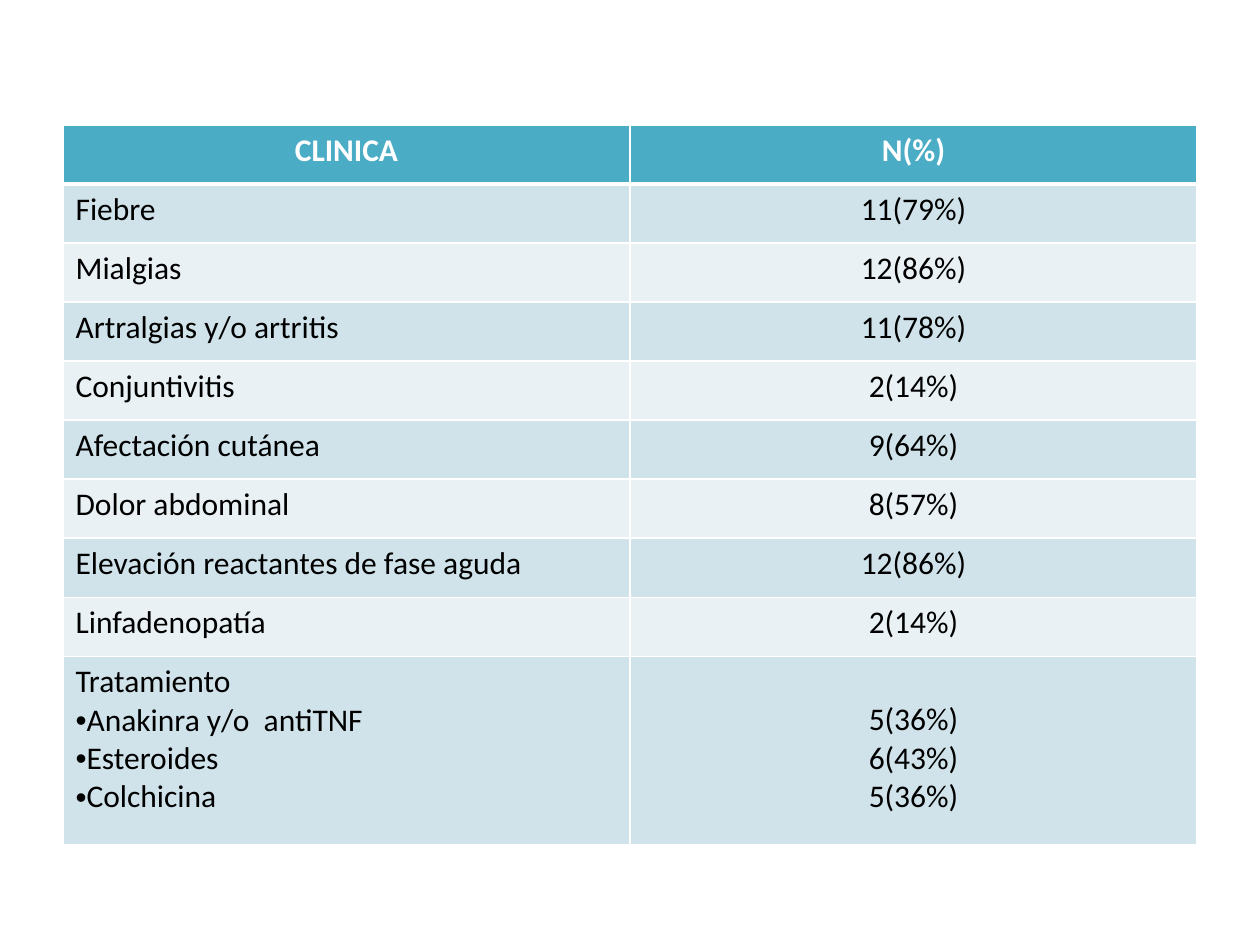
"""Build a slide with a table of clinical findings and treatments."""
import lxml.etree
import pptx
import pptx.dml.color
import pptx.enum.text
import pptx.oxml.ns
import pptx.util

Cm = pptx.util.Cm
Pt = pptx.util.Pt
RGBColor = pptx.dml.color.RGBColor
Align = pptx.enum.text.PP_ALIGN
qn = pptx.oxml.ns.qn

WHITE = RGBColor(0xFF, 0xFF, 0xFF)
BLACK = RGBColor(0x00, 0x00, 0x00)
TEAL = RGBColor(0x4B, 0xAC, 0xC6)
BANDS = (RGBColor(0xD0, 0xE3, 0xEA), RGBColor(0xE9, 0xF1, 0xF5))

HEADER = ("CLINICA", "N(%)")
FINDINGS = (
    ("Fiebre", "11(79%)"),
    ("Mialgias", "12(86%)"),
    ("Artralgias y/o artritis", "11(78%)"),
    ("Conjuntivitis", "2(14%)"),
    ("Afectación cutánea", "9(64%)"),
    ("Dolor abdominal", "8(57%)"),
    ("Elevación reactantes de fase aguda", "12(86%)"),
    ("Linfadenopatía", "2(14%)"),
)
TREATMENTS = (
    ("Anakinra y/o  antiTNF", "5(36%)"),
    ("Esteroides", "6(43%)"),
    ("Colchicina", "5(36%)"),
)


class ClinicalSlide:
    """Hold the text style and the current slide."""

    def __init__(self, deck):
        self.slide = deck.slides.add_slide(deck.slide_layouts[6])
        self.style = {"name": "Calibri", "size": Pt(18)}

    def table(self, left, top, column_width, heights):
        frame = self.slide.shapes.add_table(
            len(heights), 2, left, top, column_width * 2, sum(heights))
        for row, height in zip(frame.table.rows, heights):
            row.height = height
        return frame.table

    def border(self, cell, side, width):
        properties = cell._tc.get_or_add_tcPr()
        line = lxml.etree.SubElement(properties, qn(f"a:ln{side}"), w=str(Pt(width)))
        fill = lxml.etree.SubElement(line, qn("a:solidFill"))
        lxml.etree.SubElement(fill, qn("a:srgbClr"), val=str(WHITE))

    def bullet(self, para):
        properties = para._p.get_or_add_pPr()
        lxml.etree.SubElement(properties, qn("a:buFont"), typeface="Arial")
        lxml.etree.SubElement(properties, qn("a:buChar"), char="•")

    def text(self, cell, lines, color, bold, align):
        cell.text = "\n".join(lines)
        for para in cell.text_frame.paragraphs:
            para.alignment = align
            for span in para.runs:
                for name, value in {**self.style, "bold": bold}.items():
                    setattr(span.font, name, value)
                span.font.color.rgb = color

    def cell(self, cell, lines, row, align):
        is_header = row == 0
        widths = {"L": 1, "R": 1, "T": 3 if row == 1 else 1, "B": 3 if is_header else 1}
        for side, width in widths.items():
            self.border(cell, side, width)
        cell.fill.solid()
        cell.fill.fore_color.rgb = TEAL if is_header else BANDS[(row - 1) % 2]
        self.text(cell, lines, WHITE if is_header else BLACK, is_header, align)


def main():
    deck = pptx.Presentation()
    deck.slide_width, deck.slide_height = Cm(25.4), Cm(19.05)
    page = ClinicalSlide(deck)

    names, counts = zip(*TREATMENTS)
    rows = [([name], [count]) for name, count in (HEADER, *FINDINGS)]
    rows.append((["Tratamiento", *names], counts))
    heights = [Cm(1.19)] * (len(rows) - 1) + [Cm(3.79)]
    table = page.table(Cm(1.27), Cm(2.52), Cm(11.43), heights)

    for index, (labels, values) in enumerate(rows):
        label_align = Align.LEFT if index else Align.CENTER
        page.cell(table.cell(index, 0), labels, index, label_align)
        page.cell(table.cell(index, 1), values, index, Align.CENTER)

    last = len(rows) - 1
    for para in table.cell(last, 0).text_frame.paragraphs[1:]:
        page.bullet(para)
    table.cell(last, 1).margin_top = Cm(0.9)
    deck.save("out.pptx")


if __name__ == "__main__":
    main()
